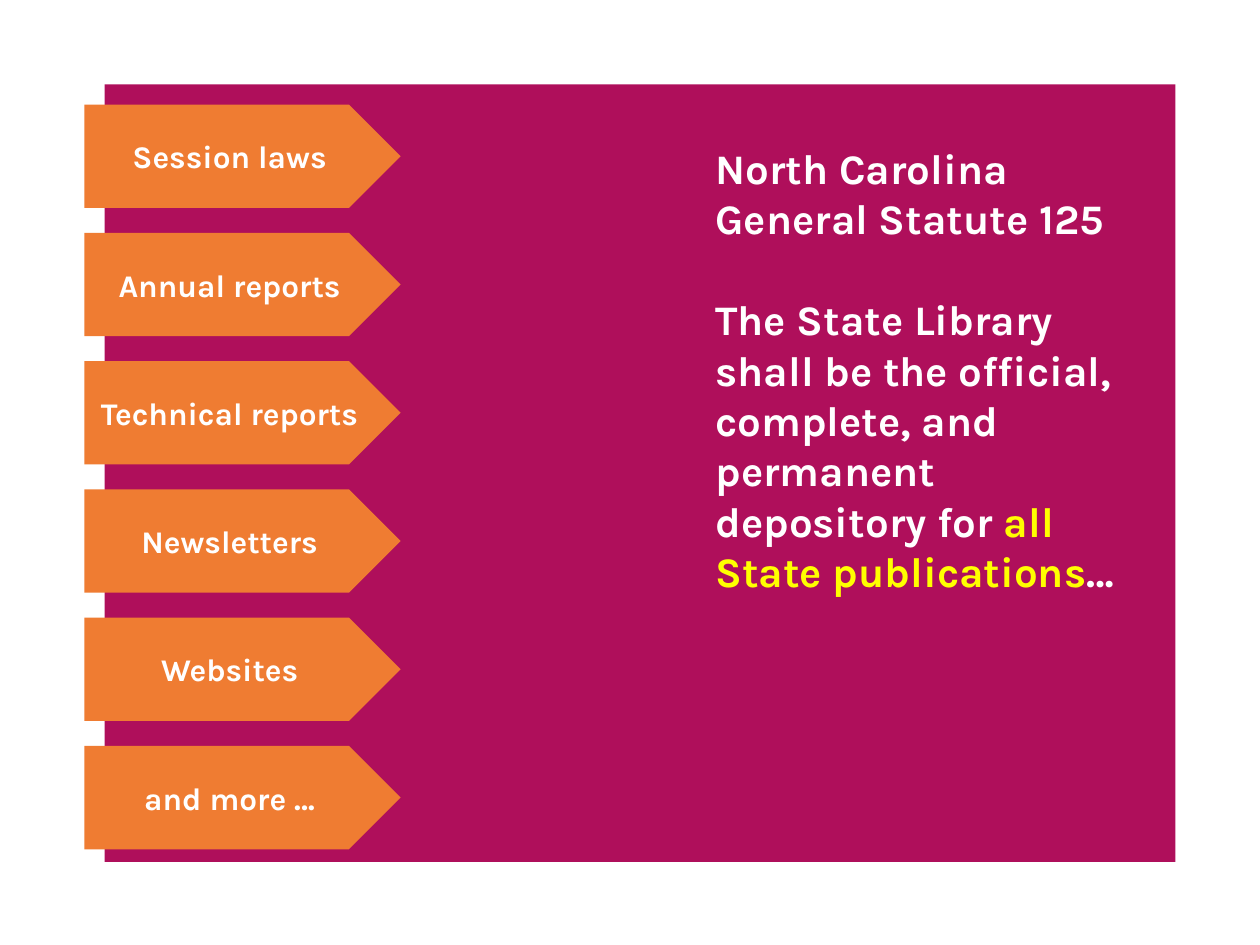
from pptx import Presentation
from pptx.dml.color import RGBColor
from pptx.enum.shapes import MSO_SHAPE
from pptx.enum.text import MSO_ANCHOR, PP_ALIGN
from pptx.util import Inches, Pt

MAGENTA = RGBColor(0xAF, 0x0F, 0x5B)
ORANGE = RGBColor(0xEF, 0x7C, 0x32)
WHITE = RGBColor(0xFF, 0xFF, 0xFF)
YELLOW = RGBColor(0xFF, 0xFF, 0x00)
FONT = "Karla"

# Boxes in inches: left, top, width, height
PANEL_BOX = (0.83, 0.67, 8.5, 6.17)
STATUTE_BOX = (5.58, 1.08, 3.5, 3.74)
ARROWS_BOX = (0.67, 0.83, 2.51, 5.91)
ARROW_HEIGHT = 0.82

PUBLICATIONS = ["Session laws", "Annual reports", "Technical reports",
                "Newsletters", "Websites", "and more …"]
STATUTE = [
    [("North Carolina General Statute 125", WHITE)],
    [("The State Library shall be the official, complete, and permanent "
      "depository for ", WHITE),
     ("all State publications", YELLOW),
     ("…", WHITE)],
]


def set_font(font, size):
    font.name = FONT
    font.size = Pt(size)
    font.bold = True
    font.color.rgb = WHITE


def add_filled_shape(slide, kind, box, color):
    shape = slide.shapes.add_shape(kind, *map(Inches, box))
    shape.shadow.inherit = False
    shape.fill.solid()
    shape.fill.fore_color.rgb = color
    shape.line.fill.background()
    return shape


def add_statute(slide, box):
    """Statute paragraphs, one line apart."""
    frame = slide.shapes.add_textbox(*map(Inches, box)).text_frame
    frame.word_wrap = True
    for index, parts in enumerate(STATUTE):
        paragraph = frame.add_paragraph() if index else frame.paragraphs[0]
        set_font(paragraph.font, 24)
        if index:
            paragraph.space_before = Pt(29)
        for text, color in parts:
            run = paragraph.add_run()
            run.text = text
            run.font.color.rgb = color


def add_arrows(slide, box):
    """Column of evenly spaced arrows filling the box."""
    left, top, width, height = box
    pitch = (height - ARROW_HEIGHT) / (len(PUBLICATIONS) - 1)
    for row, label in enumerate(PUBLICATIONS):
        arrow = add_filled_shape(
            slide, MSO_SHAPE.PENTAGON,
            (left, top + row * pitch, width, ARROW_HEIGHT), ORANGE)
        frame = arrow.text_frame
        frame.word_wrap = True
        frame.vertical_anchor = MSO_ANCHOR.MIDDLE
        paragraph = frame.paragraphs[0]
        paragraph.text = label
        paragraph.alignment = PP_ALIGN.CENTER
        set_font(paragraph.font, 18)


def main():
    presentation = Presentation()
    presentation.slide_width = Inches(10)
    presentation.slide_height = Inches(7.5)
    slide = presentation.slides.add_slide(presentation.slide_layouts[6])

    # Background panel, then its contents
    add_filled_shape(slide, MSO_SHAPE.RECTANGLE, PANEL_BOX, MAGENTA)
    add_statute(slide, STATUTE_BOX)
    add_arrows(slide, ARROWS_BOX)

    presentation.save("out.pptx")


if __name__ == "__main__":
    main()
